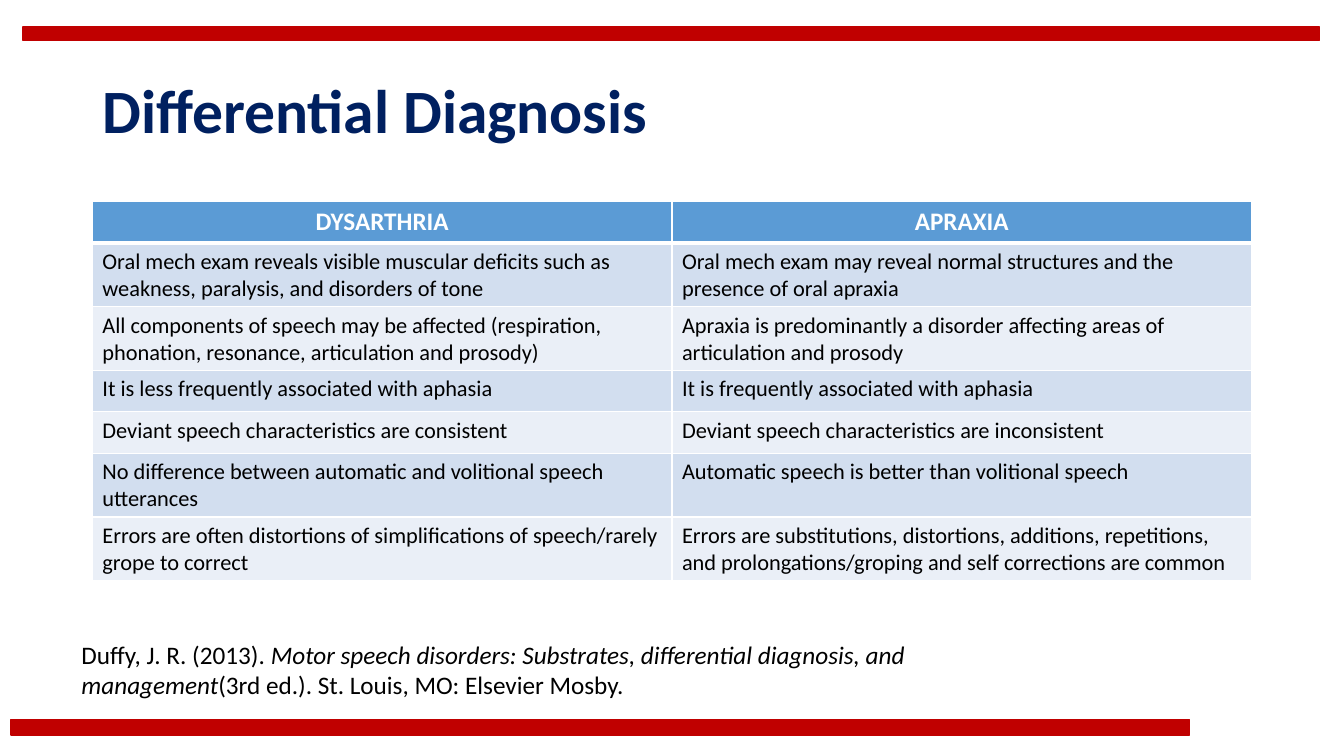
from lxml import etree
from pptx import Presentation
from pptx.dml.color import RGBColor
from pptx.enum.shapes import MSO_SHAPE
from pptx.enum.text import MSO_ANCHOR, PP_ALIGN
from pptx.oxml.ns import qn
from pptx.util import Pt

RECT = MSO_SHAPE.RECTANGLE
MIDDLE = MSO_ANCHOR.MIDDLE
CENTER, LEFT = PP_ALIGN.CENTER, PP_ALIGN.LEFT

FONT = "Calibri"
RED, NAVY, BLACK, WHITE = "C00000", "002060", "000000", "FFFFFF"
HEAD, BANDS = "5B9BD5", ("D2DEEF", "EAEFF7")

TITLE = "Differential Diagnosis"
ROWS = [
    ("DYSARTHRIA", "APRAXIA"),
    ("Oral mech exam reveals visible muscular deficits such as weakness, paralysis, and disorders of tone",
     "Oral mech exam may reveal normal structures and the presence of oral apraxia"),
    ("All components of speech may be affected (respiration, phonation, resonance, articulation and prosody)",
     "Apraxia is predominantly a disorder affecting areas of articulation and prosody"),
    ("It is less frequently associated with aphasia",
     "It is frequently associated with aphasia"),
    ("Deviant speech characteristics are consistent",
     "Deviant speech characteristics are inconsistent"),
    ("No difference between automatic and volitional speech utterances",
     "Automatic speech is better than volitional speech"),
    ("Errors are often distortions of simplifications of speech/rarely grope to correct",
     "Errors are substitutions, distortions, additions, repetitions, and prolongations/groping and self "
     "corrections are common"),
]
SOURCE = [  # text, italic
    ("Duffy, J. R. (2013).\u00a0", False),
    ("Motor speech disorders: Substrates, differential diagnosis, and management", True),
    ("(3rd ed.). St. Louis, MO: Elsevier Mosby.", False),
]

# left, top, width, height in points
BARS = [(7.92, 514.08, 841.68, 10.8), (16.56, 19.44, 925.92, 9.36)]
TITLE_BOX = (66, 28.75, 828, 104.4)
TABLE_BOX = (66, 144, 828, 206.5)
SOURCE_BOX = (51.12, 452.88, 713.52, 72.72)


def color(code):
    return RGBColor.from_string(code)


def style(para, size, code, bold=False):
    font = para.font
    font.name, font.size, font.bold = FONT, Pt(size), bold
    font.color.rgb = color(code)


def add_bar(slide, box):
    bar = slide.shapes.add_shape(RECT, *map(Pt, box))
    bar.shadow.inherit = False
    bar.fill.solid()
    bar.fill.fore_color.rgb = color(RED)
    bar.line.color.rgb = color(RED)
    bar.line.width = Pt(1)


def add_text(slide, box):
    frame = slide.shapes.add_textbox(*map(Pt, box)).text_frame
    frame.word_wrap = True
    return frame


def add_edges(cell, widths):
    """Put white borders on a cell; widths are in points by side tag."""
    props = cell._tc.get_or_add_tcPr()
    for spot, (side, width) in enumerate(widths.items()):
        edge = etree.Element(qn("a:" + side), w=str(Pt(width)))
        fill = etree.SubElement(edge, qn("a:solidFill"))
        etree.SubElement(fill, qn("a:srgbClr"), val=WHITE)
        props.insert(spot, edge)


def add_table(slide):
    count = len(ROWS)
    table = slide.shapes.add_table(count, 2, *map(Pt, TABLE_BOX)).table
    for r, row in enumerate(ROWS):
        top = r == 0
        table.rows[r].height = Pt(TABLE_BOX[3] / count)
        for c, text in enumerate(row):
            cell = table.cell(r, c)
            cell.text = text
            cell.fill.solid()
            cell.fill.fore_color.rgb = color(HEAD if top else BANDS[(r - 1) % 2])
            add_edges(cell, {"lnL": 1, "lnR": 1, "lnT": 3 if r == 1 else 1, "lnB": 3 if top else 1})
            para = cell.text_frame.paragraphs[0]
            para.alignment = CENTER if top else LEFT
            style(para, 18 if top else 16, WHITE if top else BLACK, top)


def main():
    deck = Presentation()
    deck.slide_width, deck.slide_height = Pt(960), Pt(540)
    slide = deck.slides.add_slide(deck.slide_layouts[6])
    for box in BARS:
        add_bar(slide, box)

    frame = add_text(slide, TITLE_BOX)
    frame.vertical_anchor = MIDDLE
    para = frame.paragraphs[0]
    para.text = TITLE
    para.line_spacing = 0.9
    style(para, 44, NAVY, True)

    add_table(slide)

    para = add_text(slide, SOURCE_BOX).paragraphs[0]
    for text, slant in SOURCE:
        run = para.add_run()
        run.text = text
        run.font.italic = slant
    style(para, 18, BLACK)
    deck.save("out.pptx")


if __name__ == "__main__":
    main()
